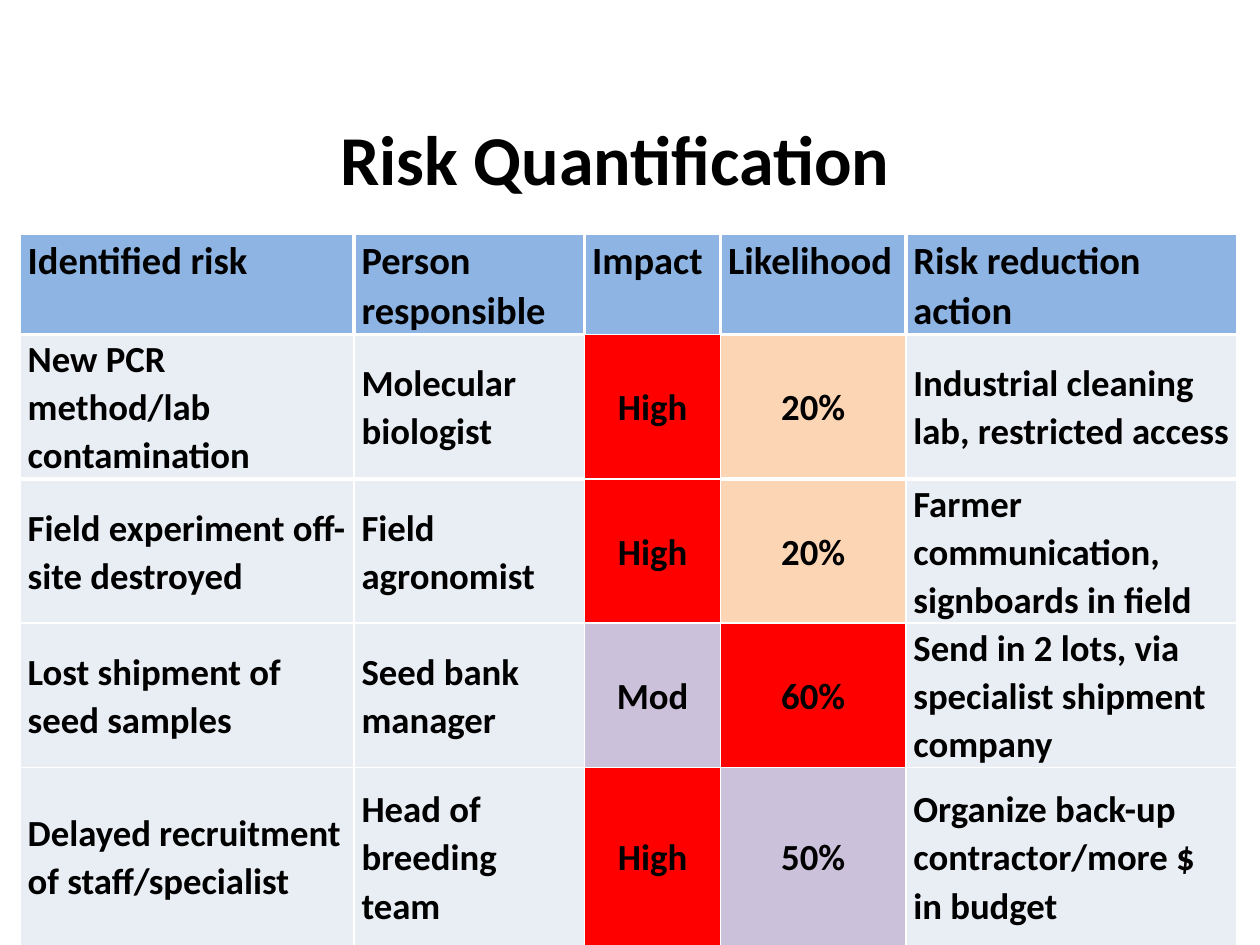
from lxml import etree
from pptx import Presentation
from pptx.dml.color import RGBColor
from pptx.enum.text import MSO_ANCHOR, PP_ALIGN
from pptx.oxml.ns import qn
from pptx.util import Inches, Pt

LEFT, CENTER = PP_ALIGN.LEFT, PP_ALIGN.CENTER
TOP, MIDDLE = MSO_ANCHOR.TOP, MSO_ANCHOR.MIDDLE
TITLE_ONLY = 5
FONT = "Calibri"
THIN, THICK = Pt(1), Pt(2.25)

COLORS = {
    "text": "000000",
    "border": "FFFFFF",
    "header": "8EB4E3",
    "plain": "E9EDF4",
    "severe": "FF0000",
    "medium": "CCC1DA",
    "low": "FCD5B5",
}
RATING_COLORS = {
    "High": "severe", "60%": "severe",
    "Mod": "medium", "50%": "medium",
    "20%": "low",
}

COLUMN_WIDTHS = [2.65, 1.83, 1.08, 1.47, 2.63]
ROW_HEIGHTS = [0.76, 1.14, 1.14, 1.14, 1.42]
IMPACT, LIKELIHOOD = 2, 3
RISKS = [
    ["Identified risk", "Person responsible", "Impact", "Likelihood",
     "Risk reduction action"],
    ["New PCR method/lab contamination", "Molecular biologist", "High", "20%",
     "Industrial cleaning lab, restricted access"],
    ["Field experiment off-site destroyed", "Field agronomist", "High", "20%",
     "Farmer communication, signboards in field"],
    ["Lost shipment of seed samples", "Seed bank manager", "Mod", "60%",
     "Send in 2 lots, via specialist shipment company"],
    ["Delayed recruitment of staff/specialist", "Head of breeding team", "High",
     "50%", "Organize back-up contractor/more $ in budget"],
]


def write_text(frame, text, size, align=LEFT, spacing=None):
    frame.word_wrap = True
    paragraph = frame.paragraphs[0]
    paragraph.alignment = align
    paragraph.line_spacing = spacing
    run = paragraph.add_run()
    run.text = text
    run.font.name = FONT
    run.font.size = Pt(size)
    run.font.bold = True
    run.font.color.rgb = RGBColor.from_string(COLORS["text"])


def set_borders(cell, widths):
    """Draw the cell's edges; widths maps L, R, T and B to line widths."""
    properties = cell._tc.get_or_add_tcPr()
    for position, side in enumerate("LRTB"):
        line = etree.Element(qn(f"a:ln{side}"), w=str(widths[side]))
        fill = etree.SubElement(line, qn("a:solidFill"))
        etree.SubElement(fill, qn("a:srgbClr"), val=COLORS["border"])
        properties.insert(position, line)


def border_widths(row, column):
    """Thick lines part the header cells and run below the first two rows."""
    def below(r):
        return THICK if r in (0, 1) and column != IMPACT else THIN

    inner = THICK if row == 0 else THIN
    return {
        "L": inner if column > 0 else THIN,
        "R": inner if column < len(COLUMN_WIDTHS) - 1 else THIN,
        "T": below(row - 1),
        "B": below(row),
    }


def add_title(slide, left, top, width, height):
    title = slide.shapes.title
    title.left, title.top = Inches(left), Inches(top)
    title.width, title.height = Inches(width), Inches(height)
    title.text_frame.vertical_anchor = MIDDLE
    write_text(title.text_frame, "Risk Quantification", 40, align=CENTER)


def add_risk_table(slide, left, top, width, height):
    table = slide.shapes.add_table(
        len(RISKS), len(COLUMN_WIDTHS),
        Inches(left), Inches(top), Inches(width), Inches(height)).table
    for column, column_width in zip(table.columns, COLUMN_WIDTHS):
        column.width = Inches(column_width)
    for row, row_height in zip(table.rows, ROW_HEIGHTS):
        row.height = Inches(row_height)

    for r, risk in enumerate(RISKS):
        is_header = r == 0
        for c, text in enumerate(risk):
            is_rating = c in (IMPACT, LIKELIHOOD) and not is_header
            color = "header" if is_header else RATING_COLORS.get(text, "plain")
            cell = table.cell(r, c)
            cell.margin_left = cell.margin_right = Inches(0.06)
            cell.margin_top = cell.margin_bottom = 0
            cell.vertical_anchor = TOP if is_header else MIDDLE
            cell.fill.solid()
            cell.fill.fore_color.rgb = RGBColor.from_string(COLORS[color])
            set_borders(cell, border_widths(r, c))
            write_text(cell.text_frame, text, 22 if is_header else 21,
                       align=CENTER if is_rating else LEFT, spacing=1.07)


def main():
    deck = Presentation()
    deck.slide_width, deck.slide_height = Inches(10), Inches(7.5)
    slide = deck.slides.add_slide(deck.slide_layouts[TITLE_ONLY])
    add_title(slide, 0.35, 0.81, 9.06, 0.88)
    add_risk_table(slide, 0.16, 1.86, sum(COLUMN_WIDTHS), sum(ROW_HEIGHTS))
    deck.save("out.pptx")


if __name__ == "__main__":
    main()
